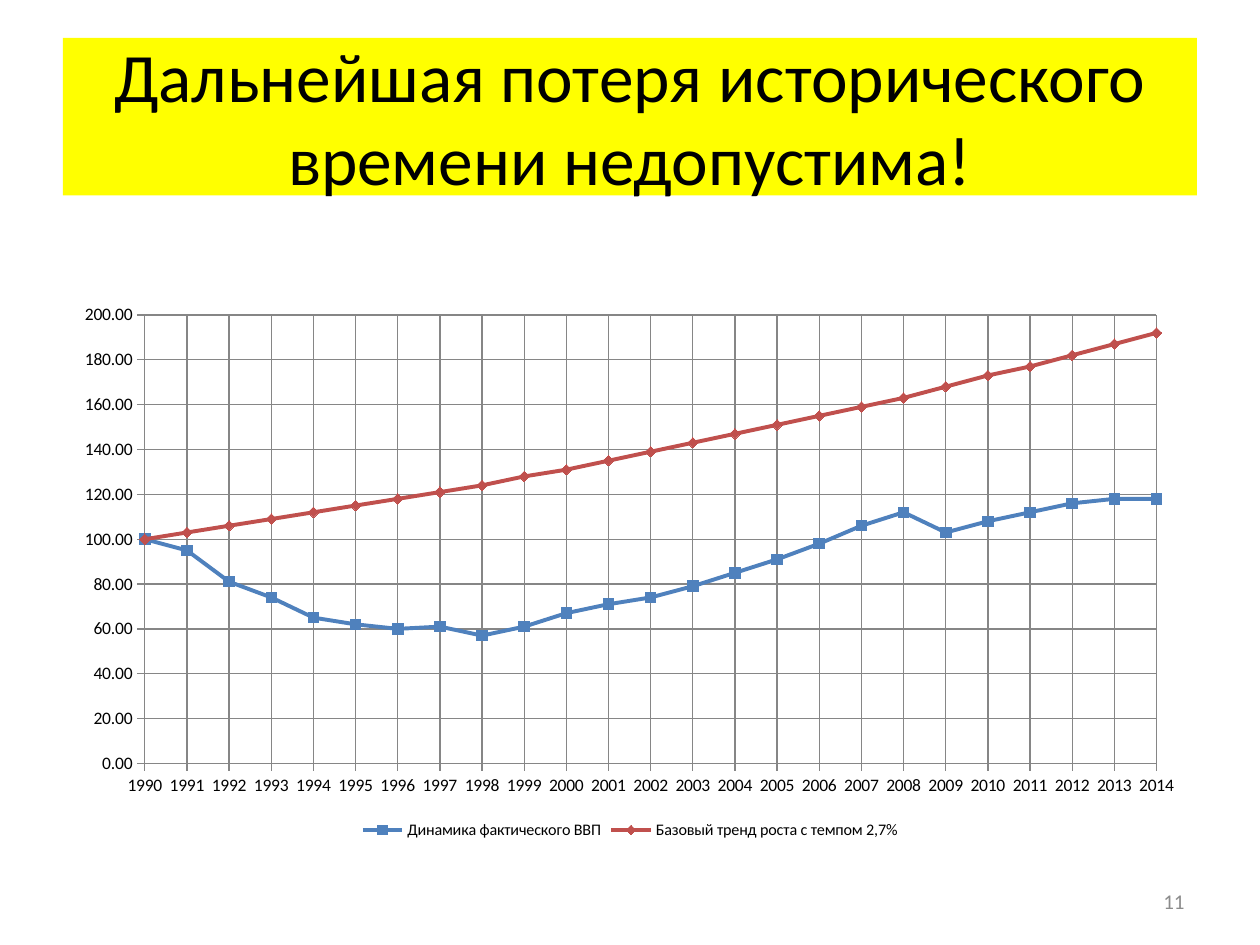
from lxml import etree
from pptx import Presentation
from pptx.chart.data import CategoryChartData
from pptx.dml.color import RGBColor
from pptx.enum.chart import XL_CHART_TYPE, XL_LEGEND_POSITION, XL_MARKER_STYLE, XL_TICK_MARK
from pptx.enum.shapes import MSO_SHAPE
from pptx.enum.text import MSO_ANCHOR, PP_ALIGN
from pptx.oxml.ns import qn
from pptx.util import Inches, Pt

LINE = XL_CHART_TYPE.LINE_MARKERS
BOTTOM = XL_LEGEND_POSITION.BOTTOM
SQUARE, DIAMOND = XL_MARKER_STYLE.SQUARE, XL_MARKER_STYLE.DIAMOND
OUT = XL_TICK_MARK.OUTSIDE
RECT = MSO_SHAPE.RECTANGLE
MIDDLE = MSO_ANCHOR.MIDDLE
CENTER, RIGHT = PP_ALIGN.CENTER, PP_ALIGN.RIGHT

TITLE = "Дальнейшая потеря исторического времени недопустима!"
PAGE = "11"
YEARS = [str(year) for year in range(1990, 2015)]
SERIES = [
    ("Динамика фактического ВВП", "blue", SQUARE,
     [100, 95, 81, 74, 65, 62, 60, 61, 57, 61, 67, 71, 74,
      79, 85, 91, 98, 106, 112, 103, 108, 112, 116, 118, 118]),
    ("Базовый тренд роста с темпом 2,7%", "red", DIAMOND,
     [100, 103, 106, 109, 112, 115, 118, 121, 124, 128, 131, 135, 139,
      143, 147, 151, 155, 159, 163, 168, 173, 177, 182, 187, 192]),
]
THEME = {
    "font": "Calibri",
    "color": {"ink": "000000", "band": "FFFF00", "page": "8C8C8C",
              "grid": "868686", "blue": "4F81BD", "red": "C0504D"},
    "size": {"title": 39.6, "chart": 10, "key": 9.2, "page": 12},
}
BOXES = {"title": (0.5, 0.3, 9, 1.25), "chart": (0.5, 2.33, 9, 4.37),
         "page": (7.17, 6.95, 2.33, 0.4)}
PLOT = (1.15, 2.5, 8.03, 3.56)


def place(name):
    return [Inches(n) for n in BOXES[name]]


def tint(name):
    return RGBColor.from_string(THEME["color"][name])


def style(font, size, color="ink"):
    font.name = THEME["font"]
    font.size = Pt(THEME["size"][size])
    font.color.rgb = tint(color)


def write(shape, text, size, color, align):
    frame = shape.text_frame
    frame.word_wrap = True
    frame.vertical_anchor = MIDDLE
    para = frame.paragraphs[0]
    para.text = text
    para.alignment = align
    style(para.font, size, color)


def stroke(line, color, width):
    line.color.rgb = tint(color)
    line.width = Pt(width)


def fix_plot(chart):
    area = chart.plots[0]._element.getparent()
    for old in area.findall(qn("c:layout")):
        area.remove(old)
    layout = etree.Element(qn("c:layout"))
    area.insert(0, layout)
    manual = etree.SubElement(layout, qn("c:manualLayout"))
    left, top, width, height = BOXES["chart"]
    x, y, w, h = PLOT
    parts = [("layoutTarget", "inner"), ("xMode", "edge"), ("yMode", "edge"),
             ("x", (x - left) / width), ("y", (y - top) / height),
             ("w", w / width), ("h", h / height)]
    for tag, value in parts:
        etree.SubElement(manual, qn("c:" + tag)).set("val", str(value))

    axis = chart.value_axis._element
    cross = axis.find(qn("c:crossBetween"))
    if cross is None:
        cross = etree.Element(qn("c:crossBetween"))
        axis.find(qn("c:crosses")).addnext(cross)
    cross.set("val", "midCat")


def add_trend(slide):
    data = CategoryChartData(number_format="0.00")
    data.categories = YEARS
    for name, _, _, values in SERIES:
        data.add_series(name, values)
    chart = slide.shapes.add_chart(LINE, *place("chart"), data).chart
    style(chart.font, "chart")
    chart.has_title = False
    chart.has_legend = True
    chart.legend.position = BOTTOM
    chart.legend.include_in_layout = False
    style(chart.legend.font, "key")

    for axis in (chart.category_axis, chart.value_axis):
        axis.has_major_gridlines = True
        axis.major_tick_mark = OUT
        style(axis.tick_labels.font, "chart")
        for line in (axis.format.line, axis.major_gridlines.format.line):
            stroke(line, "grid", 0.75)
    scale = chart.value_axis
    scale.minimum_scale, scale.maximum_scale, scale.major_unit = 0, 200, 20
    scale.tick_labels.number_format = "0.00"
    scale.tick_labels.number_format_is_linked = False

    chart.plots[0].vary_by_categories = False
    for line, (_, color, mark, _) in zip(chart.plots[0].series, SERIES):
        line.smooth = False
        stroke(line.format.line, color, 2.25)
        line.marker.style = mark
        line.marker.size = 6
        line.marker.format.fill.solid()
        line.marker.format.fill.fore_color.rgb = tint(color)
        stroke(line.marker.format.line, color, 0.75)
    fix_plot(chart)


def main():
    deck = Presentation()
    deck.slide_width, deck.slide_height = Inches(10), Inches(7.5)
    slide = deck.slides.add_slide(deck.slide_layouts[6])
    band = slide.shapes.add_shape(RECT, *place("title"))
    band.shadow.inherit = False
    band.fill.solid()
    band.fill.fore_color.rgb = tint("band")
    band.line.fill.background()
    write(band, TITLE, "title", "ink", CENTER)
    add_trend(slide)
    write(slide.shapes.add_textbox(*place("page")), PAGE, "page", "page", RIGHT)
    deck.save("out.pptx")


if __name__ == "__main__":
    main()
